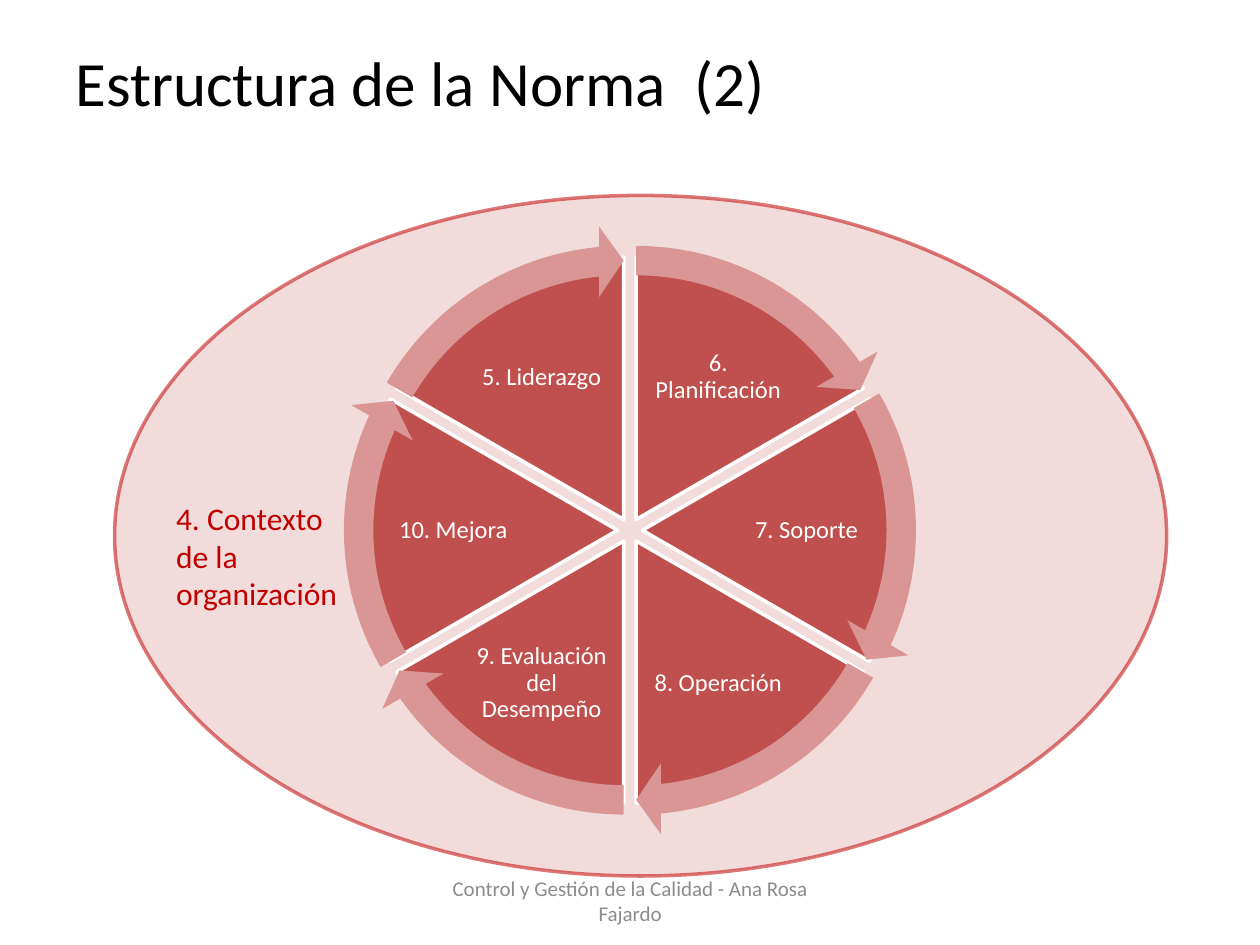
"""Build the slide on the structure of the standard: a six-step cycle within its context."""
import math
from dataclasses import dataclass
from typing import Any, Optional

import lxml.etree
import pptx
import pptx.dml.color
import pptx.enum.shapes
import pptx.enum.text
import pptx.oxml.ns
import pptx.util

Cm = pptx.util.Cm
Pt = pptx.util.Pt
RGBColor = pptx.dml.color.RGBColor
PRESET = pptx.enum.shapes.MSO_SHAPE
ALIGN = pptx.enum.text.PP_ALIGN
ANCHOR = pptx.enum.text.MSO_ANCHOR

BLACK = RGBColor(0x00, 0x00, 0x00)
WHITE = RGBColor(0xFF, 0xFF, 0xFF)
GREY = RGBColor(0x8C, 0x8C, 0x8C)
DEEP_RED = RGBColor(0xC0, 0x00, 0x00)
SECTOR_RED = RGBColor(0xC0, 0x50, 0x4D)
ARROW_PINK = RGBColor(0xD9, 0x96, 0x94)
PALE_PINK = RGBColor(0xF2, 0xDC, 0xDB)

CENTRE_X, CENTRE_Y = 12.7, 10.69
SECTOR_SIZE, ARROW_SIZE = 10.57, 11.86
SECTOR_OFFSET, LABEL_OFFSET = 0.25, 3.56
LABEL_WIDTH, LABEL_HEIGHT = 2.8, 2.1
FULL_TURN, FIRST_ANGLE = 216, 162
ARROW_BAND, ARROW_TIP, ARROW_HEAD = 0.05, 3.28, 0.06

STEPS = [
    "6. Planificación",
    "7. Soporte",
    "8. Operación",
    "9. Evaluación del Desempeño",
    "10. Mejora",
    "5. Liderazgo",
]


@dataclass(frozen=True)
class Box:
    left: float
    top: float
    width: float
    height: float

    def lengths(self) -> list[Any]:
        return [Cm(v) for v in (self.left, self.top, self.width, self.height)]


@dataclass(frozen=True)
class Caption:
    text: str
    box: Box
    size: int
    color: RGBColor
    align: Any = ALIGN.LEFT
    anchor: Any = ANCHOR.MIDDLE
    inset: Optional[float] = None
    spacing: Optional[float] = None


@dataclass(frozen=True)
class Step:
    name: str
    start: float
    end: float
    direction: float

    def box(self, offset: float, width: float, height: float) -> Box:
        x = CENTRE_X + offset * math.cos(self.direction)
        y = CENTRE_Y + offset * math.sin(self.direction)
        return Box(x - width / 2, y - height / 2, width, height)


def draw_shape(shapes: Any, preset: Any, box: Box, fill: RGBColor,
               line: Optional[RGBColor] = None, adjustments: tuple = ()) -> Any:
    shape = shapes.add_shape(preset, *box.lengths())
    shape.shadow.inherit = False
    shape.fill.solid()
    shape.fill.fore_color.rgb = fill
    if line is None:
        shape.line.fill.background()
    else:
        shape.line.color.rgb = line
        shape.line.width = Pt(2)
    for index, value in enumerate(adjustments):
        shape.adjustments[index] = value
    return shape


def draw_caption(shapes: Any, caption: Caption) -> None:
    frame = shapes.add_textbox(*caption.box.lengths()).text_frame
    frame.word_wrap = True
    frame.vertical_anchor = caption.anchor
    if caption.inset is not None:
        frame.margin_left = frame.margin_right = Cm(caption.inset)
        frame.margin_top = frame.margin_bottom = Cm(caption.inset)
    paragraph = frame.paragraphs[0]
    paragraph.text = caption.text
    paragraph.alignment = caption.align
    paragraph.line_spacing = caption.spacing
    paragraph.font.name = "Calibri"
    paragraph.font.size = Pt(caption.size)
    paragraph.font.color.rgb = caption.color


def draw_context(shapes: Any) -> None:
    context = draw_shape(shapes, PRESET.OVAL, Box(2.31, 3.94, 21.21, 13.72),
                         PALE_PINK, DEEP_RED)
    outline_color = context.element.xpath(".//a:ln//a:srgbClr")[0]
    lxml.etree.SubElement(outline_color, pptx.oxml.ns.qn("a:alpha"), val="52000")


def draw_cycle(shapes: Any) -> None:
    sweep = FULL_TURN / len(STEPS)
    steps = [
        Step(name, (FIRST_ANGLE + i * sweep) % FULL_TURN,
             (FIRST_ANGLE + (i + 1) * sweep) % FULL_TURN,
             math.radians(-60 + 360 * i / len(STEPS)))
        for i, name in enumerate(STEPS)
    ]
    for step in steps:
        draw_shape(shapes, PRESET.PIE, step.box(SECTOR_OFFSET, SECTOR_SIZE, SECTOR_SIZE),
                   SECTOR_RED, WHITE, (step.start, step.end))
        draw_caption(shapes, Caption(
            step.name, step.box(LABEL_OFFSET, LABEL_WIDTH, LABEL_HEIGHT), 14, WHITE,
            ALIGN.CENTER, inset=0.05, spacing=0.9))
    for step in steps:
        draw_shape(shapes, PRESET.CIRCULAR_ARROW,
                   step.box(SECTOR_OFFSET, ARROW_SIZE, ARROW_SIZE), ARROW_PINK,
                   adjustments=(ARROW_BAND, ARROW_TIP, step.end - ARROW_TIP,
                                step.start, ARROW_HEAD))


def main() -> None:
    deck = pptx.Presentation()
    deck.slide_width, deck.slide_height = Cm(25.4), Cm(19.05)
    shapes = deck.slides.add_slide(deck.slide_layouts[6]).shapes
    draw_context(shapes)
    draw_caption(shapes, Caption("Estructura de la Norma  (2)",
                                 Box(1.27, 0.76, 22.86, 1.75), 36, BLACK))
    draw_cycle(shapes.add_group_shape().shapes)
    draw_caption(shapes, Caption("Control y Gestión de la Calidad - Ana Rosa Fajardo",
                                 Box(8.68, 17.65, 8.05, 1.02), 12, GREY, ALIGN.CENTER))
    draw_caption(shapes, Caption("4. Contexto de la organización",
                                 Box(3.3, 9.93, 3.99, 2.57), 18, DEEP_RED,
                                 anchor=ANCHOR.TOP))
    deck.save("out.pptx")


if __name__ == "__main__":
    main()
